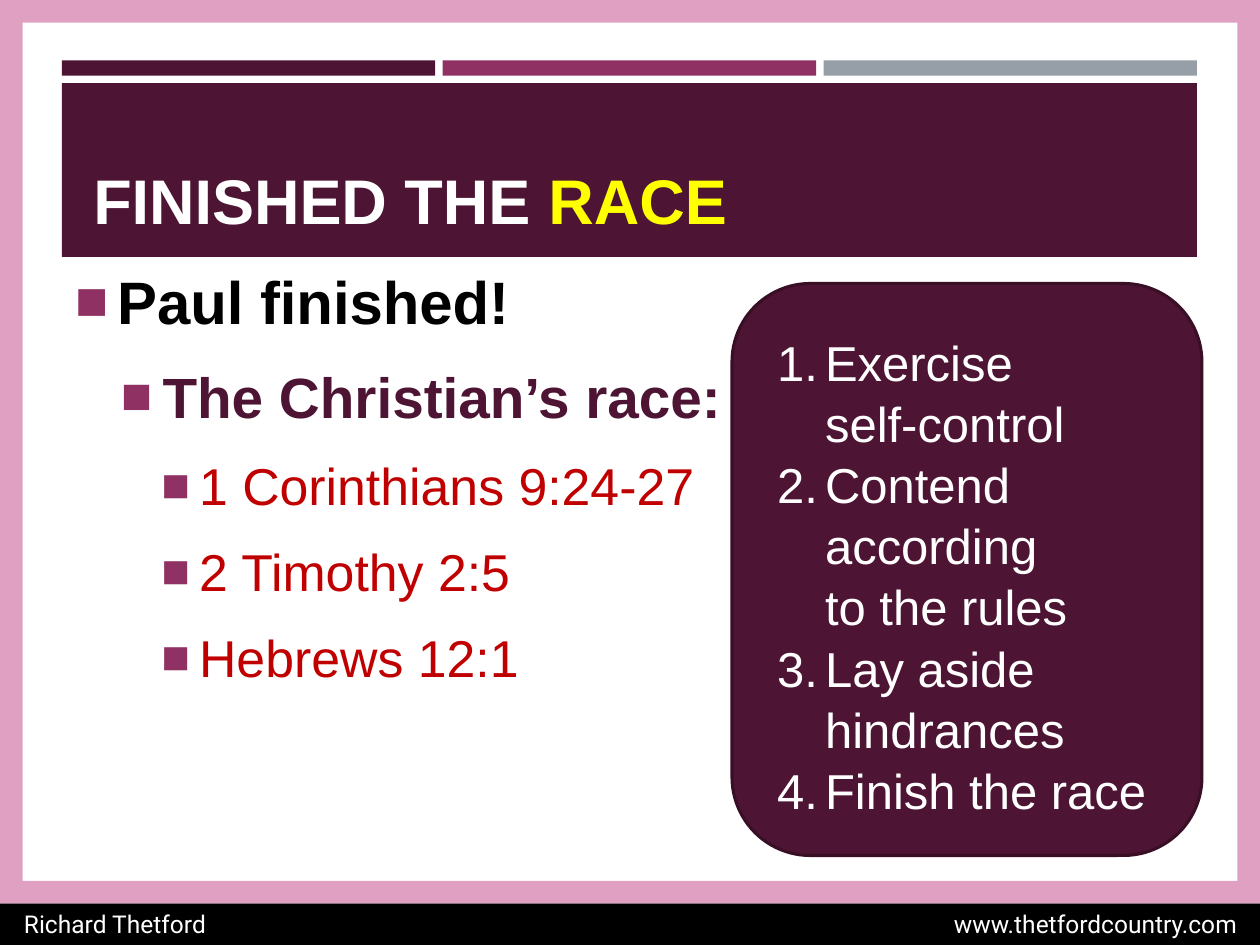
from lxml import etree
from pptx import Presentation
from pptx import util as u
from pptx.dml.color import RGBColor
from pptx.enum import shapes, text
from pptx.oxml.ns import qn

W, H = 10, 7.5
LEFT, BAND_W = 0.49, 9.01      # title band and its three bars
COLS, GAP = 3, 0.06
EDGE, FRAME_H = 0.18, 7.16     # pink frame
PLUM, MAUVE, GREY, PINK = "4D1434", "903163", "969FA7", "DFA0C1"
WHITE, BLACK, YELLOW, RED = "FFFFFF", "000000", "FFFF00", "C00000"


def rgb(value):
    return RGBColor.from_string(value)


def place(sp, x, y, w, h):
    sp.left, sp.top, sp.width, sp.height = map(u.Inches, (x, y, w, h))


def add_box(s, x, y, w, h, fill, kind=shapes.MSO_SHAPE.RECTANGLE):
    sp = s.shapes.add_shape(kind, *map(u.Inches, (x, y, w, h)))
    sp.shadow.inherit = False
    sp.fill.solid()
    sp.fill.fore_color.rgb = rgb(fill)
    sp.line.fill.background()
    return sp


def add_run(p, words, size, color, bold=False, font="Arial"):
    r = p.add_run()
    r.text = words
    r.font.size, r.font.bold, r.font.name = u.Pt(size), bold, font
    r.font.color.rgb = rgb(color)


def set_frame(sp, anchor):
    tf = sp.text_frame
    tf.word_wrap = True
    tf.auto_size = text.MSO_AUTO_SIZE.NONE
    tf.vertical_anchor = anchor
    return tf


def next_paragraph(tf, index):
    return tf.add_paragraph() if index else tf.paragraphs[0]


def set_indent(p, left, hanging):
    pPr = p._p.get_or_add_pPr()
    pPr.set("marL", str(u.Inches(left)))
    pPr.set("indent", str(-u.Inches(hanging)))
    return pPr


def add_square_bullet(pPr):
    color = etree.SubElement(pPr, qn("a:buClr"))
    etree.SubElement(color, qn("a:srgbClr"), val=MAUVE)
    etree.SubElement(pPr, qn("a:buSzPct"), val="92000")
    etree.SubElement(pPr, qn("a:buFont"), typeface="Arial")
    etree.SubElement(pPr, qn("a:buChar"), char="■")


def add_band(s):
    col_w = (BAND_W - (COLS - 1) * GAP) / COLS
    for i, color in enumerate((PLUM, MAUVE, GREY)):
        add_box(s, LEFT + i * (col_w + GAP), 0.48, col_w, 0.12, color)
    add_box(s, LEFT, 0.66, BAND_W, 1.38, PLUM)


def bring_to_front(sp):
    sp.element.getparent().append(sp.element)


def fill_title(sp):
    bring_to_front(sp)
    place(sp, 0.64, 0.75, 8.74, 1.18)
    p = set_frame(sp, text.MSO_ANCHOR.BOTTOM).paragraphs[0]
    p.alignment = text.PP_ALIGN.LEFT
    add_run(p, "FINISHED THE ", 36, WHITE, True)
    add_run(p, "RACE", 36, YELLOW, True)


def fill_body(sp, items):
    # Per level: left indent, hanging, size, colour, bold
    levels = ((0.33, 0.33, 34.2, BLACK, True),
              (0.69, 0.33, 32.4, PLUM, True),
              (0.98, 0.3, 29.6, RED, False))
    bring_to_front(sp)
    place(sp, 0.5, 2.16, 8.97, 3.24)
    tf = set_frame(sp, text.MSO_ANCHOR.MIDDLE)
    for i, (level, words) in enumerate(items):
        left, hanging, size, color, bold = levels[level]
        p = next_paragraph(tf, i)
        p.level = level
        p.line_spacing = 1.0
        p.space_before, p.space_after = u.Pt(round(size * 0.26, 1)), u.Pt(6)
        add_square_bullet(set_indent(p, left, hanging))
        add_run(p, words, size, color, bold)


def add_footer(s, left_words, right_words):
    sp = add_box(s, 0, FRAME_H + 0.01, W, H - FRAME_H - 0.01, BLACK)
    tf = set_frame(sp, text.MSO_ANCHOR.MIDDLE)
    tf.margin_left = u.Inches(0.19)
    p = tf.paragraphs[0]
    p.alignment = text.PP_ALIGN.LEFT
    tabs = etree.SubElement(p._p.get_or_add_pPr(), qn("a:tabLst"))
    etree.SubElement(tabs, qn("a:tab"), pos=str(u.Inches(9.63)), algn="r")
    add_run(p, left_words + "\t" + right_words, 14, WHITE, font="Roboto")


def add_frame(s):
    for x in (0, W - EDGE):
        add_box(s, x, 0, EDGE, FRAME_H, PINK)
    for y in (0, FRAME_H - EDGE + 0.01):
        add_box(s, 0, y, W, EDGE, PINK)


def add_rules_panel(s, items):
    panel = add_box(s, 5.81, 2.25, 3.73, 4.54, PLUM,
                    shapes.MSO_SHAPE.ROUNDED_RECTANGLE)
    panel.line.color.rgb = rgb("390F26")
    panel.line.width = u.Pt(1.75)
    box = s.shapes.add_textbox(*map(u.Inches, (6.07, 2.57, 3.41, 3.87)))
    tf = set_frame(box, text.MSO_ANCHOR.TOP)
    for i, lines in enumerate(items):
        p = next_paragraph(tf, i)
        p.line_spacing = 1.04
        pPr = set_indent(p, 0.38, 0.38)
        etree.SubElement(pPr, qn("a:buFont"), typeface="Arial")
        etree.SubElement(pPr, qn("a:buAutoNum"), type="arabicPeriod")
        for j, line in enumerate(lines):
            if j:
                p.add_line_break()
            add_run(p, line, 28, WHITE)


def main():
    prs = Presentation()
    prs.slide_width, prs.slide_height = u.Inches(W), u.Inches(H)
    s = prs.slides.add_slide(prs.slide_layouts[1])

    # Title band, title and list
    add_band(s)
    fill_title(s.shapes.title)
    fill_body(s.placeholders[1], [(0, "Paul finished!"),
                                  (1, "The Christian’s race:"),
                                  (2, "1 Corinthians 9:24-27"),
                                  (2, "2 Timothy 2:5"),
                                  (2, "Hebrews 12:1")])

    # Footer and frame
    add_footer(s, "Richard Thetford", "www.thetfordcountry.com")
    add_frame(s)

    # Numbered panel
    add_rules_panel(s, [("Exercise", "self-control"),
                        ("Contend according", "to the rules"),
                        ("Lay aside hindrances",),
                        ("Finish the race",)])
    prs.save("out.pptx")


if __name__ == "__main__":
    main()
